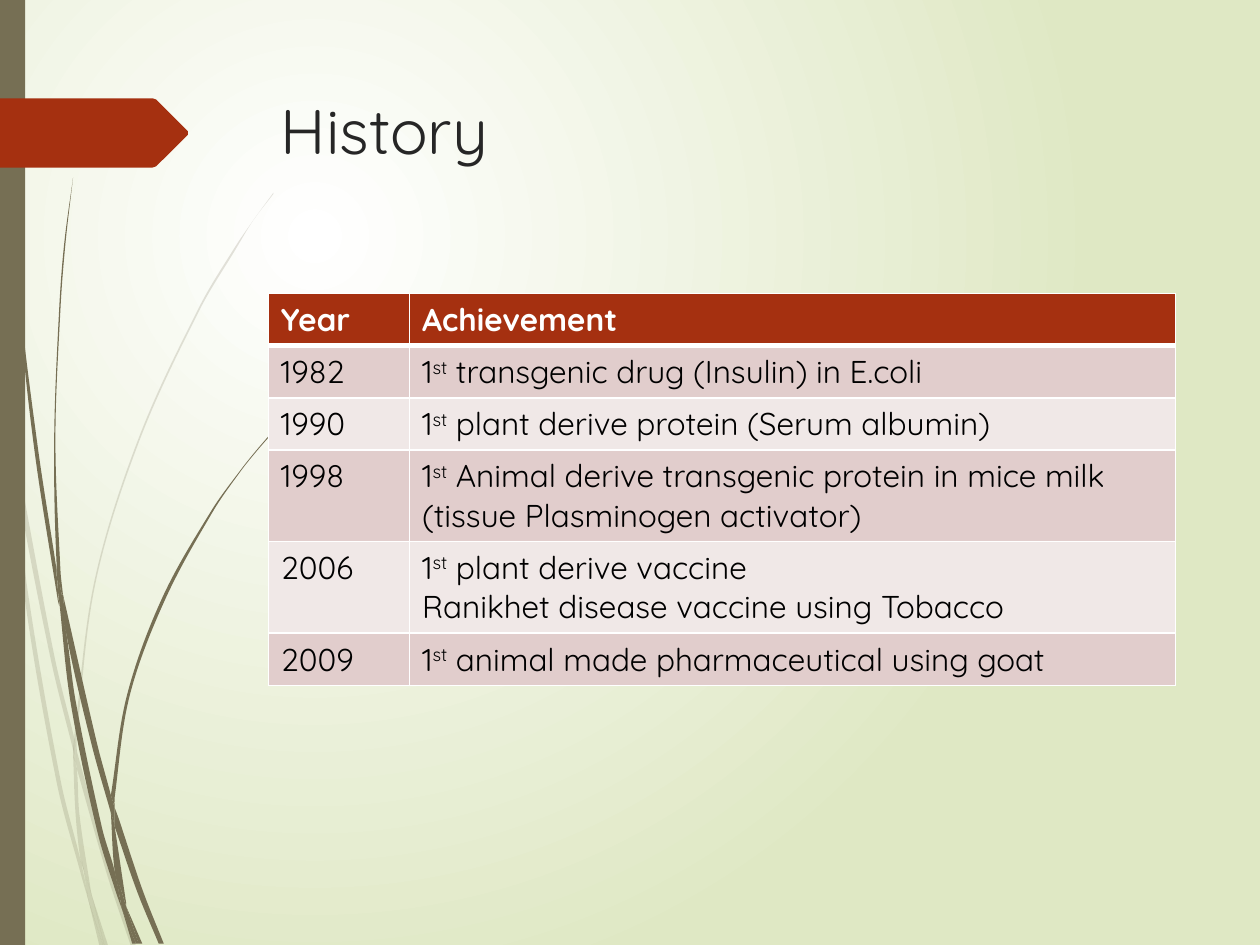
import pptx
import pptx.util
import pptx.dml.color
import pptx.enum.text
import pptx.enum.shapes
import pptx.oxml.ns
import math
from dataclasses import dataclass
from lxml import etree

qn = pptx.oxml.ns.qn
SCALE = 9144  # EMU per px, 100 px to the inch


@dataclass(frozen=True)
class Theme:
    font: str = "Quicksand"
    title_size: int = 36
    table_size: int = 18
    title: str = "262626"
    white: str = "FFFFFF"
    black: str = "000000"
    accent: str = "A53010"
    stem: str = "766F54"
    back: str = "DFE8C4"
    bands: tuple = ("E1CDCC", "F0E8E7")


THEME = Theme()

# Each leaf is outlined by smooth edges that meet at its corners
PALE_LEAVES = [
    [[(8, 350), (6, 322), (0, 282)], [(0, 299), (7, 344), (8, 350)]],
    [[(10, 345), (12, 376), (40, 522), (59, 599)], [(59, 586), (43, 520), (10, 345)]],
    [[(61, 610), (85, 694), (104, 751)], [(108, 751), (88, 692), (64, 607), (61, 596)]],
    [[(73, 711), (83, 751)], [(86, 751), (73, 711)]],
    [[(8, 350), (19, 470), (45, 621), (64, 693), (70, 714)],
     [(70, 714), (69, 707), (64, 683), (48, 619), (22, 469), (12, 376), (8, 350)]],
    [[(58, 599), (60, 646), (64, 683), (67, 692), (73, 711)],
     [(73, 711), (72, 706), (63, 646), (61, 610), (58, 599)]],
    [[(217, 153), (201, 175), (186, 197), (158, 244), (110, 348), (75, 461), (59, 584), (59, 586)],
     [(61, 596), (61, 584), (76, 462), (111, 349), (159, 245), (187, 198), (201, 175), (217, 154)]],
    [[(70, 714), (79, 751)], [(82, 751), (70, 714)]],
    [[(59, 586), (58, 599), (61, 608), (61, 610)], [(61, 596), (59, 586)]],
    [[(65, 683), (69, 707), (70, 714), (82, 751)], [(83, 751), (73, 711), (67, 692), (65, 683)]],
]
DARK_LEAVES = [
    [[(2, 0), (3, 48), (5, 110), (14, 233), (27, 355), (46, 477), (47, 481)],
     [(45, 457), (45, 453), (30, 355), (15, 232), (6, 109), (4, 48), (3, 0)]],
    [[(50, 472), (53, 505), (73, 592), (88, 645)], [(88, 633), (88, 631), (77, 590), (50, 472)]],
    [[(91, 656), (109, 708), (126, 749)], [(130, 749), (113, 706), (94, 649), (91, 641)]],
    [[(47, 477), (56, 557), (77, 659), (92, 708), (97, 722)],
     [(96, 717), (91, 691), (81, 657), (60, 556), (53, 505), (47, 477)]],
    [[(58, 141), (51, 193), (47, 245), (43, 349), (45, 449), (49, 472)],
     [(50, 472), (48, 453), (44, 349), (48, 245), (52, 193), (58, 141)]],
    [[(100, 719), (110, 749)], [(113, 749), (100, 719)]],
    [[(45, 449), (45, 453), (47, 477), (53, 505)], [(50, 472), (49, 472), (45, 449)]],
    [[(215, 344), (203, 358), (191, 373), (168, 405), (129, 474), (101, 551), (88, 631)],
     [(91, 641), (91, 633), (103, 552), (131, 476), (169, 406), (191, 374), (203, 359), (216, 344)]],
    [[(97, 722), (105, 749)], [(108, 749), (97, 722)]],
    [[(88, 645), (91, 691), (96, 706), (100, 719)], [(100, 716), (91, 656), (90, 651), (88, 645)]],
    [[(88, 645), (90, 651), (91, 656)], [(91, 641), (88, 631), (88, 633), (88, 645)]],
    [[(91, 691), (96, 717), (97, 722), (108, 749)], [(110, 749), (100, 719), (96, 706), (91, 691)]],
]
TAG = [[(0, 78), (121, 78)], [(124, 79), (149, 104)], [(149, 107), (124, 132)], [(121, 133), (0, 133)]]

ROWS = [
    ("Year", "Achievement"),
    ("1982", "1^st^ transgenic drug (Insulin) in E.coli"),
    ("1990", "1^st^ plant derive protein (Serum albumin)"),
    ("1998", "1^st^ Animal derive transgenic protein in mice milk "
             "(tissue Plasminogen activator)"),
    ("2006", "1^st^ plant derive vaccine\nRanikhet disease vaccine using Tobacco"),
    ("2009", "1^st^ animal made pharmaceutical using goat"),
]


def px(n):
    return pptx.util.Emu(round(n * SCALE))


def rgb(color):
    return pptx.dml.color.RGBColor.from_string(color)


def set_font(font, color, **values):
    for name, value in values.items():
        setattr(font, name, value)
    font.color.rgb = rgb(color)


def paint(sp, color, alpha=100):
    sp.shadow.inherit = False
    sp.fill.solid()
    sp.fill.fore_color.rgb = rgb(color)
    sp.line.fill.background()
    if alpha < 100:
        clr = sp._element.spPr.find(".//" + qn("a:srgbClr"))
        etree.SubElement(clr, qn("a:alpha"), val=str(alpha * 1000))


def curve_parts(edge):
    """Bezier points of each span; handles follow the neighbours, a third of the span long."""
    if len(edge) == 2:
        return [edge[1:]]
    ends = [edge[0], *edge, edge[-1]]
    parts = []
    for a, b, c, d in zip(ends, ends[1:], ends[2:], ends[3:]):
        reach = math.dist(b, c) / 3
        u, v = reach / math.dist(a, c), reach / math.dist(b, d)
        parts.append([(b[0] + (c[0] - a[0]) * u, b[1] + (c[1] - a[1]) * u),
                      (c[0] - (d[0] - b[0]) * v, c[1] - (d[1] - b[1]) * v), c])
    return parts


def add_outline(shapes, x, y, edges, color, alpha=100):
    parts, last = [], edges[0][0]
    for edge in edges:
        if edge[0] != last:
            parts.append([edge[0]])
        parts += curve_parts(edge)
        last = edge[-1]
    fb = shapes.build_freeform(px(x + edges[0][0][0]), px(y + edges[0][0][1]))
    fb.add_line_segments([(px(x + a), px(y + b)) for part in parts for a, b in part], close=True)
    sp = fb.convert_to_shape()
    # Join each three points of a span into one curve
    lines = iter(sp._element.findall(".//" + qn("a:lnTo")))
    for part in parts:
        group = [next(lines) for _ in part]
        if len(group) == 3:
            curve = etree.Element(qn("a:cubicBezTo"))
            group[0].addprevious(curve)
            for line in group:
                curve.append(line[0])
                line.getparent().remove(line)
    paint(sp, color, alpha)


def set_background(s):
    fill = s.background.fill
    fill.gradient()
    for stop, color in zip(fill.gradient_stops, (THEME.white, THEME.back)):
        stop.color.rgb = rgb(color)
    grad = s._element.find(".//" + qn("a:gradFill"))
    circle = etree.Element(qn("a:path"), path="circle")
    etree.SubElement(circle, qn("a:fillToRect"), l="50000", t="50000", r="100000", b="100000")
    grad.replace(grad.find(qn("a:lin")), circle)


def add_side_art(s, x, y, w, h):
    # Plant stems
    for leaves, alpha in ((PALE_LEAVES, 20), (DARK_LEAVES, 100)):
        group = s.shapes.add_group_shape()
        for leaf in leaves:
            add_outline(group.shapes, x, y, leaf, THEME.stem, alpha)
    # Side bar and arrow tag
    bar = s.shapes.add_shape(pptx.enum.shapes.MSO_SHAPE.RECTANGLE, px(x), px(y), px(w), px(h))
    paint(bar, THEME.stem)
    add_outline(s.shapes, x, y, TAG, THEME.accent)


def add_title(s, x, y, w, h, text):
    sp = s.shapes.title
    sp.left, sp.top, sp.width, sp.height = map(px, (x, y, w, h))
    tf = sp.text_frame
    tf.vertical_anchor = pptx.enum.text.MSO_ANCHOR.TOP
    p = tf.paragraphs[0]
    p.alignment = pptx.enum.text.PP_ALIGN.LEFT
    r = p.add_run()
    r.text = text
    set_font(r.font, THEME.title, name=THEME.font, size=pptx.util.Pt(THEME.title_size))


def set_borders(cell, **widths):
    tc_pr = cell._tc.get_or_add_tcPr()
    for side in "LRTB":
        ln = etree.SubElement(tc_pr, qn("a:ln" + side), w=str(pptx.util.Pt(widths.get(side, 1))))
        fill = etree.SubElement(ln, qn("a:solidFill"))
        etree.SubElement(fill, qn("a:srgbClr"), val=THEME.white)


def fill_cell(cell, text, color, **values):
    tf = cell.text_frame
    for i, line in enumerate(text.split("\n")):
        p = tf.paragraphs[0] if i == 0 else tf.add_paragraph()
        for j, part in enumerate(line.split("^")):
            r = p.add_run()
            r.text = part
            set_font(r.font, color, **values)
            if j % 2:  # parts between carets are raised
                r._r.get_or_add_rPr().set("baseline", "30000")


def add_history_table(s, x, y, w, year_w, row_h):
    table = s.shapes.add_table(len(ROWS), 2, px(x), px(y), px(w), px(row_h * len(ROWS))).table
    for col, width in zip(table.columns, (year_w, w - year_w)):
        col.width = px(width)
    for i, row in enumerate(ROWS):
        head = i == 0
        for cell, text in zip(table.rows[i].cells, row):
            set_borders(cell, B=3 if head else 1, T=3 if i == 1 else 1)
            cell.fill.solid()
            cell.fill.fore_color.rgb = rgb(THEME.accent if head else THEME.bands[(i - 1) % 2])
            fill_cell(cell, text, THEME.white if head else THEME.black, name=THEME.font,
                      size=pptx.util.Pt(THEME.table_size), bold=head)


def main():
    prs = pptx.Presentation()
    prs.slide_width, prs.slide_height = px(1000), px(750)
    s = prs.slides.add_slide(prs.slide_layouts[5])
    set_background(s)
    add_side_art(s, 0, 0, 20, 750)
    add_title(s, 213, 68, 721, 140, "History")
    add_history_table(s, 213, 233, 720, 112, 41)
    prs.save("out.pptx")


if __name__ == "__main__":
    main()
